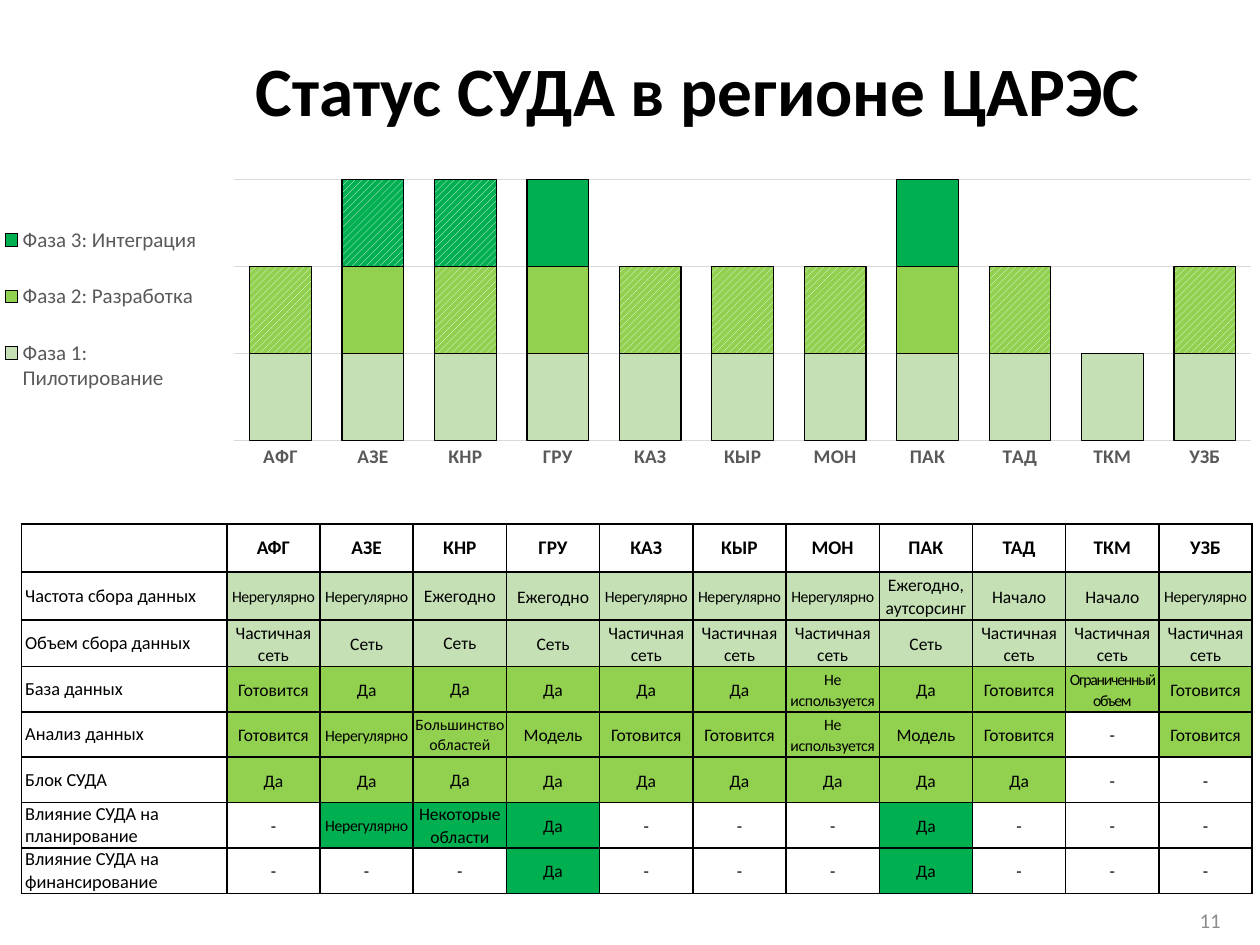
from lxml import etree
from pptx import Presentation
from pptx import util as u
from pptx.chart.data import CategoryChartData
from pptx.dml.color import RGBColor
from pptx.enum import chart as ch, dml, text
from pptx.oxml import ns

LANDS = "АФГ АЗЕ КНР ГРУ КАЗ КЫР МОН ПАК ТАД ТКМ УЗБ".split()
PALE, LIME, GREEN = "C5E0B4", "92D050", "00B050"
BLACK, GREY, RULE = "000000", "595959", "D9D9D9"
FACE = "Calibri"
PHASES = [
    ("Фаза 1: Пилотирование", PALE, LANDS, []),
    ("Фаза 2: Разработка", LIME, [n for n in LANDS if n != "ТКМ"],
     ["АФГ", "КНР", "КАЗ", "КЫР", "МОН", "ТАД", "УЗБ"]),
    ("Фаза 3: Интеграция", GREEN, ["АЗЕ", "КНР", "ГРУ", "ПАК"], ["АЗЕ", "КНР"]),
]
ROWS = [
    ("Частота сбора данных", PALE,
     "Нерегулярно|Нерегулярно|Ежегодно|Ежегодно|Нерегулярно|Нерегулярно|"
     "Нерегулярно|Ежегодно, аутсорсинг|Начало|Начало|Нерегулярно"),
    ("Объем сбора данных", PALE,
     "Частичная сеть|Сеть|Сеть|Сеть|Частичная сеть|Частичная сеть|"
     "Частичная сеть|Сеть|Частичная сеть|Частичная сеть|Частичная сеть"),
    ("База данных", LIME,
     "Готовится|Да|Да|Да|Да|Да|Не используется|Да|Готовится|"
     "Ограниченный объем|Готовится"),
    ("Анализ данных", LIME,
     "Готовится|Нерегулярно|Большинство областей|Модель|Готовится|Готовится|"
     "Не используется|Модель|Готовится|-|Готовится"),
    ("Блок СУДА", LIME, "Да|Да|Да|Да|Да|Да|Да|Да|Да|-|-"),
    ("Влияние СУДА на планирование", GREEN,
     "-|Нерегулярно|Некоторые области|Да|-|-|-|Да|-|-|-"),
    ("Влияние СУДА на финансирование", GREEN, "-|-|-|Да|-|-|-|Да|-|-|-"),
]
TIGHT = {"Нерегулярно": -20, "Не используется": -20,
         "Ограниченный объем": -70, "Большинство областей": 0}


def hue(code):
    return RGBColor.from_string(code)


def style(font, size, code, bold=False):
    font.name, font.size, font.bold = FACE, u.Pt(size), bold
    font.color.rgb = hue(code)


def stroke(line, code):
    line.color.rgb = hue(code)
    line.width = u.Pt(0.75)


def place(parent, spot, box, inner=False):
    for old in parent.findall(ns.qn("c:layout")):
        parent.remove(old)
    lay = etree.Element(ns.qn("c:layout"))
    man = etree.SubElement(lay, ns.qn("c:manualLayout"))
    pairs = [("layoutTarget", "inner")] if inner else []
    pairs += [("xMode", "edge"), ("yMode", "edge"), *zip("xywh", box)]
    for tag, val in pairs:
        etree.SubElement(man, ns.qn("c:" + tag)).set("val", str(val))
    parent.insert(spot, lay)


def add_bars(slide):
    data = CategoryChartData()
    data.categories = LANDS
    for name, _, have, _ in PHASES:
        data.add_series(name, [100 if n in have else None for n in LANDS])
    chart = slide.shapes.add_chart(
        ch.XL_CHART_TYPE.COLUMN_STACKED, u.Inches(0), u.Inches(1.27),
        u.Inches(10), u.Inches(2.6), data).chart
    style(chart.font, 10, BLACK)
    chart.has_title = False
    plot = chart.plots[0]
    plot.gap_width, plot.overlap, plot.vary_by_categories = 50, 100, False
    for series, (_, code, _, part) in zip(plot.series, PHASES):
        series.format.fill.solid()
        series.format.fill.fore_color.rgb = hue(code)
        stroke(series.format.line, BLACK)
        for land in part:
            form = series.points[LANDS.index(land)].format
            form.fill.patterned()
            form.fill.pattern = dml.MSO_PATTERN.WIDE_UPWARD_DIAGONAL
            form.fill.fore_color.rgb = hue("FFFFFF")
            form.fill.back_color.rgb = hue(code)
            stroke(form.line, BLACK)
    cats, vals = chart.category_axis, chart.value_axis
    style(cats.tick_labels.font, 11, GREY, True)
    cats.major_tick_mark = ch.XL_TICK_MARK.NONE
    stroke(cats.format.line, RULE)
    vals.minimum_scale, vals.maximum_scale, vals.major_unit = 0, 300, 100
    vals.has_major_gridlines = True
    stroke(vals.major_gridlines.format.line, RULE)
    vals.visible = False
    chart.has_legend = True
    key = chart.legend
    key.position = ch.XL_LEGEND_POSITION.LEFT
    key.include_in_layout = False
    style(key.font, 12, GREY)
    place(key._element, 1, (0, 0.11, 0.16, 0.69))
    area = chart._chartSpace.find(".//" + ns.qn("c:plotArea"))
    place(area, 0, (0.186, 0.059, 0.807, 0.797), True)


def border(cell):
    props = cell._tc.get_or_add_tcPr()
    for side in "LRTB":
        line = etree.SubElement(props, ns.qn("a:ln" + side), w=str(u.Pt(1)))
        fill = etree.SubElement(line, ns.qn("a:solidFill"))
        etree.SubElement(fill, ns.qn("a:srgbClr"), val=BLACK)


def add_grid(slide):
    wide = [1.63] + [0.74] * len(LANDS)
    high = [0.38] * 2 + [0.36] * 6
    grid = slide.shapes.add_table(
        len(high), len(wide), u.Inches(0.17), u.Inches(4.16),
        u.Inches(sum(wide)), u.Inches(sum(high))).table
    grid.first_row = grid.horz_banding = False
    for col, size in zip(grid.columns, wide):
        col.width = u.Inches(size)
    for row, size in zip(grid.rows, high):
        row.height = u.Inches(size)
    lines = [("", None, LANDS)]
    lines += [(name, code, cells.split("|")) for name, code, cells in ROWS]
    for r, (name, code, cells) in enumerate(lines):
        for c, word in enumerate([name, *cells]):
            cell = grid.cell(r, c)
            body = r > 0 and c > 0
            side = 0 if body and LANDS[c - 1] == "КНР" else 0.03
            cell.margin_left = cell.margin_right = u.Inches(side)
            cell.margin_top = u.Inches(0.01 if body and side else 0)
            cell.margin_bottom = 0
            cell.vertical_anchor = text.MSO_ANCHOR.MIDDLE
            border(cell)
            if body and word != "-":
                cell.fill.solid()
                cell.fill.fore_color.rgb = hue(code)
            else:
                cell.fill.background()
            cell.text_frame.text = word
            para = cell.text_frame.paragraphs[0]
            if c:
                para.alignment = text.PP_ALIGN.CENTER
            if body:
                para.line_spacing = 1.07
            size = 11 if r == 0 else 10.5 if c == 0 else 9 if word in TIGHT else 10
            for run in para.runs:
                style(run.font, size, BLACK, r == 0)
                if body and TIGHT.get(word):
                    run._r.get_or_add_rPr().set("spc", str(TIGHT[word]))


def write(shape, words, box, size, code, align, bold=False):
    shape.left, shape.top, shape.width, shape.height = map(u.Inches, box)
    frame = shape.text_frame
    frame.text = words
    frame.word_wrap = True
    frame.vertical_anchor = text.MSO_ANCHOR.MIDDLE
    para = frame.paragraphs[0]
    para.alignment = align
    style(para.runs[0].font, size, code, bold)
    return para


def main():
    deck = Presentation()
    deck.slide_width, deck.slide_height = u.Inches(10), u.Inches(7.5)
    slide = deck.slides.add_slide(deck.slide_layouts[5])
    head = write(slide.shapes.title, "Статус СУДА в регионе ЦАРЭС",
                 (1.93, 0.4, 8.07, 0.69), 39.6, BLACK, text.PP_ALIGN.LEFT, True)
    head.line_spacing = 0.9
    add_bars(slide)
    add_grid(slide)
    write(slide.shapes.add_textbox(0, 0, 0, 0), "11",
          (9.21, 7.11, 0.79, 0.39), 12, "8C8C8C", text.PP_ALIGN.CENTER)
    deck.save("out.pptx")


if __name__ == "__main__":
    main()
